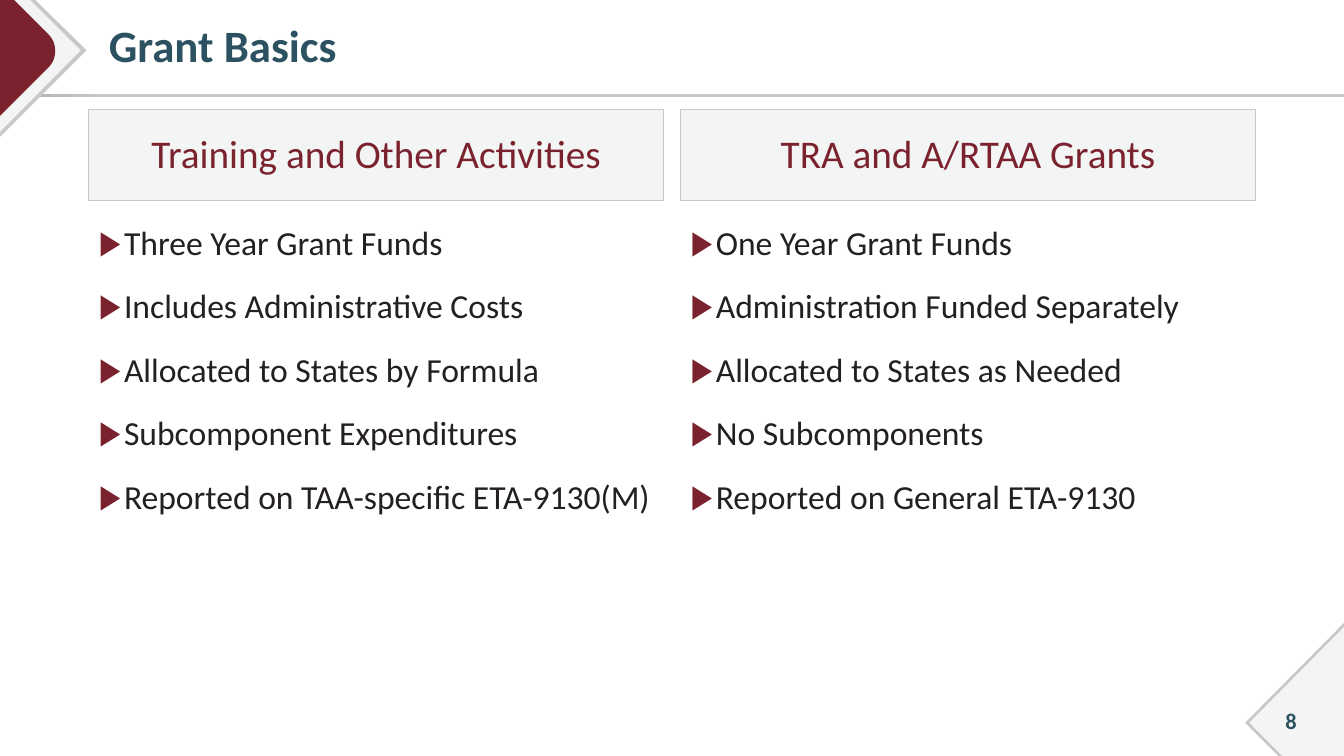
from dataclasses import dataclass

from lxml.etree import SubElement
from pptx import Presentation
from pptx.dml.color import RGBColor
from pptx.enum.shapes import MSO_SHAPE
from pptx.enum.text import MSO_ANCHOR, MSO_AUTO_SIZE, PP_ALIGN
from pptx.oxml.ns import qn
from pptx.util import Inches, Pt

Point = tuple[float, float]


@dataclass(frozen=True)
class Theme:
    font: str = "Calibri"
    maroon: str = "7A232F"
    teal: str = "2C5261"
    ink: str = "242021"
    pale: str = "F3F4F4"
    grey: str = "C8C8C6"
    dark_grey: str = "ABABA8"
    title_size: int = 32
    heading_size: int = 28
    body_size: int = 24
    number_size: int = 16


@dataclass(frozen=True)
class Column:
    left: float
    heading_idx: int
    list_idx: int
    heading: str
    items: list[str]


@dataclass(frozen=True)
class Ornament:
    points: list[Point]
    color: str


THEME = Theme()
COLUMN_WIDTH = 5.7

COLUMNS = [
    Column(0.88, 1, 2, "Training and Other Activities", [
        "Three Year Grant Funds",
        "Includes Administrative Costs",
        "Allocated to States by Formula",
        "Subcomponent Expenditures",
        "Reported on TAA-specific ETA-9130(M)",
    ]),
    Column(6.75, 3, 4, "TRA and A/RTAA Grants", [
        "One Year Grant Funds",
        "Administration Funded Separately",
        "Allocated to States as Needed",
        "No Subcomponents",
        "Reported on General ETA-9130",
    ]),
]


def curve(a: Point, b: Point, c: Point, d: Point, steps: int = 16) -> list[Point]:
    """Points along a cubic Bezier curve."""
    def at(t: float, i: int) -> float:
        u = 1 - t
        return u**3 * a[i] + 3 * u * u * t * b[i] + 3 * u * t * t * c[i] + t**3 * d[i]
    return [(at(n / steps, 0), at(n / steps, 1)) for n in range(steps + 1)]


ROUNDED_TIP = curve((0.48, 0.34), (0.57, 0.43), (0.57, 0.58), (0.48, 0.67))
ORNAMENTS = [
    # Top left corner
    Ornament([(0, 0), (0.35, 0), (0.86, 0.5), (0, 1.36)], THEME.grey),
    Ornament([(0, 0), (0.3, 0), (0.8, 0.5), (0, 1.31)], THEME.pale),
    Ornament([(0, 0), (0.14, 0), *ROUNDED_TIP, (0, 1.15)], THEME.maroon),
    # Bottom right corner
    Ornament([(13.33, 6.18), (13.33, 7.5), (12.68, 7.5), (12.35, 7.17)], THEME.grey),
    Ornament([(13.33, 6.22), (13.33, 7.5), (12.72, 7.5), (12.39, 7.17)], THEME.pale),
]


def rgb(color: str) -> RGBColor:
    return RGBColor.from_string(color)


def place(sp, left: float, top: float, width: float, height: float) -> None:
    sp.left, sp.top = Inches(left), Inches(top)
    sp.width, sp.height = Inches(width), Inches(height)


def add_bullet(p, color: str) -> None:
    pPr = p._p.get_or_add_pPr()
    pPr.set("marL", str(Inches(0.25)))
    pPr.set("indent", str(Inches(-0.25)))
    SubElement(SubElement(pPr, qn("a:buClr")), qn("a:srgbClr")).set("val", color)
    SubElement(pPr, qn("a:buFont")).set("typeface", "Arial")
    SubElement(pPr, qn("a:buChar")).set("char", "▶")


def write(sp, *lines: str, size: int, color: str, bold: bool = False,
          align: PP_ALIGN = PP_ALIGN.LEFT, anchor: MSO_ANCHOR = MSO_ANCHOR.MIDDLE,
          spacing: float = 1.0, before: int = 0, bullet: bool = False) -> None:
    tf = sp.text_frame
    tf.word_wrap = True
    tf.auto_size = MSO_AUTO_SIZE.NONE
    tf.vertical_anchor = anchor
    for i, line in enumerate(lines):
        p = tf.add_paragraph() if i else tf.paragraphs[0]
        if bullet:
            add_bullet(p, THEME.maroon)
        p.alignment = align
        p.line_spacing = spacing
        p.space_before = Pt(before if i else 0)
        r = p.add_run()
        r.text = line
        r.font.name, r.font.size, r.font.bold = THEME.font, Pt(size), bold
        r.font.color.rgb = rgb(color)


def add_rule(s) -> None:
    sp = s.shapes.add_shape(MSO_SHAPE.RECTANGLE, 0, Inches(0.93),
                            Inches(13.33), Inches(0.03))
    sp.shadow.inherit = False
    sp.line.fill.background()
    sp.fill.gradient()
    sp.fill.gradient_angle = 0
    stops = ((0, THEME.dark_grey), (0.08, THEME.grey))
    for stop, (position, color) in zip(sp.fill.gradient_stops, stops):
        stop.position = position
        stop.color.rgb = rgb(color)


def add_ornament(s, ornament: Ornament) -> None:
    points = [(Inches(x), Inches(y)) for x, y in ornament.points]
    builder = s.shapes.build_freeform(*points[0])
    builder.add_line_segments(points[1:], close=True)
    sp = builder.convert_to_shape()
    sp.shadow.inherit = False
    sp.fill.solid()
    sp.fill.fore_color.rgb = rgb(ornament.color)
    sp.line.fill.background()


def fill_column(s, column: Column) -> None:
    heading = s.placeholders[column.heading_idx]
    place(heading, column.left, 1.09, COLUMN_WIDTH, 0.9)
    heading.fill.solid()
    heading.fill.fore_color.rgb = rgb(THEME.pale)
    heading.line.color.rgb = rgb(THEME.grey)
    heading.line.width = Pt(0.75)
    write(heading, column.heading, size=THEME.heading_size, color=THEME.maroon,
          align=PP_ALIGN.CENTER, spacing=0.95)

    body = s.placeholders[column.list_idx]
    place(body, column.left, 2.18, COLUMN_WIDTH, 4.59)
    write(body, *column.items, size=THEME.body_size, color=THEME.ink,
          anchor=MSO_ANCHOR.TOP, spacing=0.95, before=18, bullet=True)


def main() -> None:
    prs = Presentation()
    prs.slide_width, prs.slide_height = Inches(13.33), Inches(7.5)
    s = prs.slides.add_slide(prs.slide_layouts.get_by_name("Comparison"))

    # Rule and corner ornaments
    add_rule(s)
    for ornament in ORNAMENTS:
        add_ornament(s, ornament)

    # Title
    title = s.shapes.title
    place(title, 0.88, 0.05, 12.12, 0.86)
    title.text_frame.margin_left = Inches(0.2)
    write(title, "Grant Basics", size=THEME.title_size, color=THEME.teal,
          bold=True, spacing=0.9)

    # Two compared columns
    for column in COLUMNS:
        fill_column(s, column)

    # Slide number
    number = s.shapes.add_textbox(Inches(12.45), Inches(6.95), Inches(0.71), Inches(0.4))
    write(number, "8", size=THEME.number_size, color=THEME.teal, bold=True,
          align=PP_ALIGN.CENTER)

    prs.save("out.pptx")


if __name__ == "__main__":
    main()
